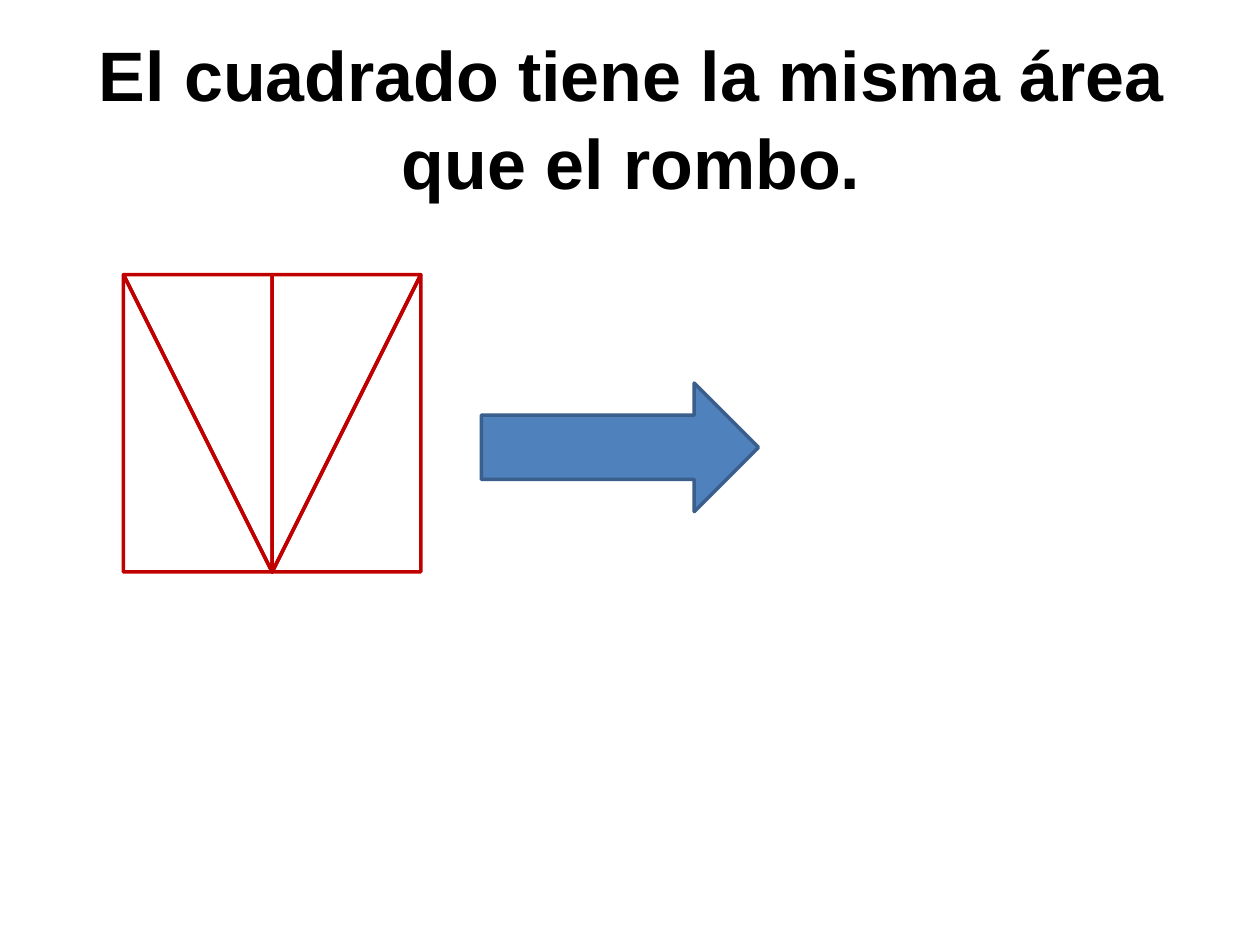
from pptx import Presentation
from pptx.dml.color import RGBColor
from pptx.enum.shapes import MSO_SHAPE
from pptx.enum.text import MSO_ANCHOR, PP_ALIGN
from pptx.util import Inches, Pt

BLACK = RGBColor(0x00, 0x00, 0x00)
RED = RGBColor(0xC0, 0x00, 0x00)
BLUE = RGBColor(0x4F, 0x81, 0xBD)
NAVY = RGBColor(0x3A, 0x5F, 0x8C)

LEFT, TOP, SIDE = 0.98, 2.18, 2.36  # the square


def add_title(slide, text):
    box = slide.shapes.add_textbox(Inches(0.51), Inches(0.29), Inches(9), Inches(1.25))
    frame = box.text_frame
    frame.word_wrap = True
    frame.vertical_anchor = MSO_ANCHOR.MIDDLE
    frame.text = text
    para = frame.paragraphs[0]
    para.alignment = PP_ALIGN.CENTER
    para.line_spacing = 1.05
    font = para.runs[0].font
    font.name = "Arial"
    font.size = Pt(40)
    font.bold = True
    font.color.rgb = BLACK


def add_form(slide, kind, left, top, width, height, line, fill=None):
    form = slide.shapes.add_shape(
        kind, Inches(left), Inches(top), Inches(width), Inches(height))
    form.shadow.inherit = False
    if fill is None:
        form.fill.background()
    else:
        form.fill.solid()
        form.fill.fore_color.rgb = fill
    form.line.color.rgb = line
    form.line.width = Pt(2)
    return form


def add_half(slide, left, flip):
    # Two right triangles that share a diagonal
    for turn in (0, 180):
        piece = add_form(slide, MSO_SHAPE.RIGHT_TRIANGLE, left, TOP, SIDE / 2, SIDE, RED)
        piece.rotation = turn
        if flip:
            piece.element.spPr.xfrm.set("flipH", "1")


def main():
    deck = Presentation()
    deck.slide_width, deck.slide_height = Inches(10), Inches(7.5)
    slide = deck.slides.add_slide(deck.slide_layouts[6])

    add_title(slide, "El cuadrado tiene la misma área que el rombo.")

    # Arrow from the square towards the rhombus
    add_form(slide, MSO_SHAPE.RIGHT_ARROW, 3.82, 3.04, 2.2, 1.02, NAVY, BLUE)

    # Square cut into four triangles, mirrored about its middle
    add_half(slide, LEFT, False)
    add_half(slide, LEFT + SIDE / 2, True)

    deck.save("out.pptx")


if __name__ == "__main__":
    main()
